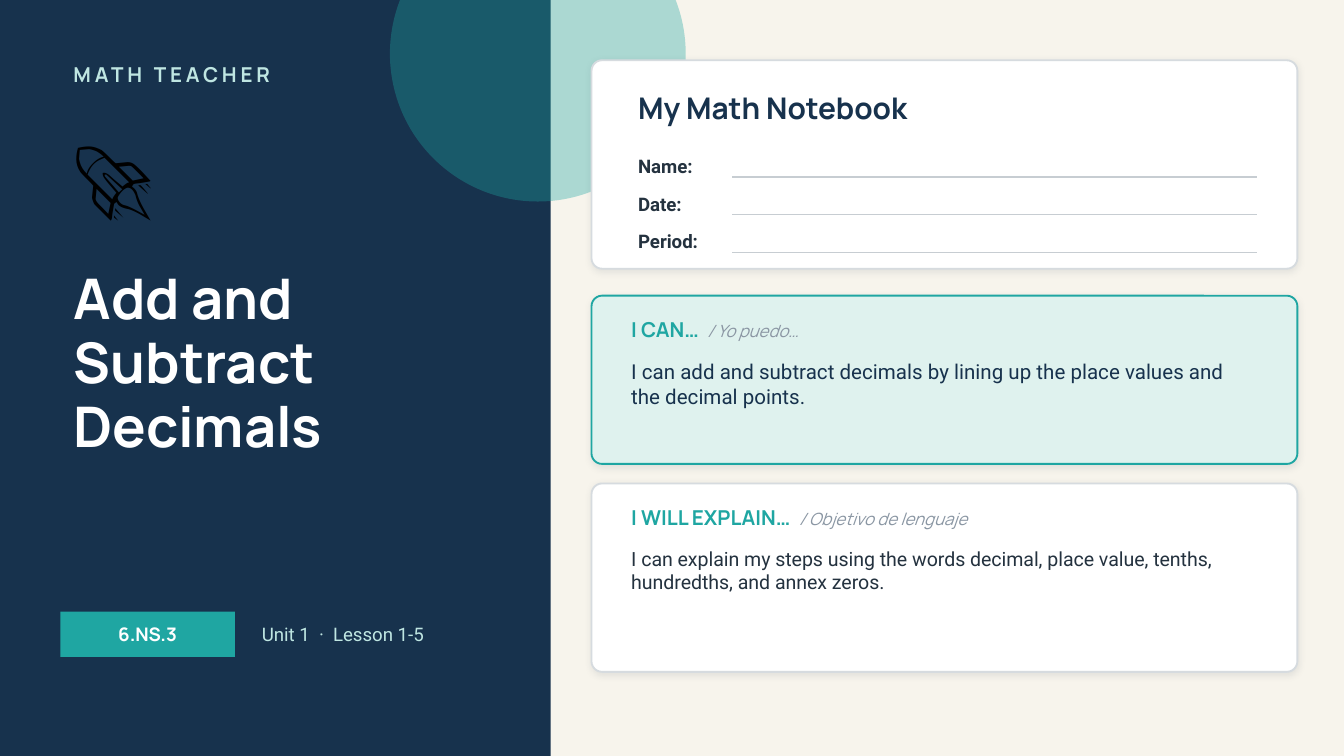
from lxml.etree import SubElement
from pptx import Presentation
from pptx.dml.color import RGBColor
from pptx.enum.shapes import MSO_CONNECTOR as Link, MSO_SHAPE as Form
from pptx.enum.text import MSO_ANCHOR as Anchor, MSO_AUTO_SIZE as Fit, PP_ALIGN as Align
from pptx.oxml.ns import qn
from pptx.util import Cm, Pt

NAVY = RGBColor(0x17, 0x32, 0x4D)
TEAL = RGBColor(0x1F, 0xA6, 0xA2)
MINT = RGBColor(0xBF, 0xE6, 0xE2)
PALE = RGBColor(0xDF, 0xF2, 0xEE)
CREAM = RGBColor(0xF7, 0xF4, 0xEC)
WHITE = RGBColor(0xFF, 0xFF, 0xFF)
BLACK = RGBColor(0, 0, 0)
INK = RGBColor(0x24, 0x32, 0x3F)
GRAY = RGBColor(0x8A, 0x96, 0xA3)
EDGE = RGBColor(0xD6, 0xDB, 0xDF)
RULE = RGBColor(0xC7, 0xCD, 0xD2)
SHADE = "1C2E42"


class Deck:
    head = "Manrope"
    body = "Roboto"
    curve = 0.2

    def __init__(self, show):
        self.slide = show.slides.add_slide(show.slide_layouts[5])
        self.slide.background.fill.solid()
        self.slide.background.fill.fore_color.rgb = CREAM
        self.shapes = self.slide.shapes

    def add_run(self, par, text, size, color, font=None, bold=False, slant=False, space=0):
        run = par.add_run()
        run.text = text
        face = run.font
        face.name = font or self.body
        face.size = Pt(size)
        face.bold = bold
        face.italic = slant
        face.color.rgb = color
        if space:
            run._r.get_or_add_rPr().set("spc", str(space * 100))

    def fill_in(self, shape, runs, anchor=Anchor.MIDDLE, align=Align.LEFT):
        frame = shape.text_frame
        frame.word_wrap = True
        frame.auto_size = Fit.NONE
        frame.vertical_anchor = anchor
        par = frame.paragraphs[0]
        par.alignment = align
        for text, size, color, *style in runs:
            self.add_run(par, text, size, color, *style)
        return par

    def text(self, x, y, w, h, *runs, anchor=Anchor.MIDDLE):
        box = self.shapes.add_textbox(Cm(x), Cm(y), Cm(w), Cm(h))
        self.fill_in(box, runs, anchor)

    def title(self, x, y, w, h, text, size, color):
        box = self.shapes.title
        box.left, box.top, box.width, box.height = Cm(x), Cm(y), Cm(w), Cm(h)
        par = self.fill_in(box, [(text, size, color, self.head, True)], Anchor.TOP)
        par.line_spacing = 0.95
        box.element.getparent().append(box.element)

    def shape(self, form, x, y, w, h, fill, edge=None, alpha=None):
        shape = self.shapes.add_shape(form, Cm(x), Cm(y), Cm(w), Cm(h))
        shape.shadow.inherit = False
        shape.fill.solid()
        shape.fill.fore_color.rgb = fill
        if edge is None:
            shape.line.fill.background()
        else:
            shape.line.color.rgb = edge
            shape.line.width = Pt(1)
        if alpha:
            tint = shape.element.spPr.find(qn("a:solidFill"))[0]
            SubElement(tint, qn("a:alpha"), val=str(alpha * 1000))
        return shape

    def card(self, y, h, fill, edge):
        card = self.shape(Form.ROUNDED_RECTANGLE, 11.18, y, 13.34, h, fill, edge)
        card.adjustments[0] = self.curve / h
        effects = card.element.spPr.find(qn("a:effectLst"))
        shade = SubElement(effects, qn("a:outerShdw"), blurRad=str(Pt(4)),
                           dist=str(Pt(1)), dir="5400000", rotWithShape="0")
        tint = SubElement(shade, qn("a:srgbClr"), val=SHADE)
        SubElement(tint, qn("a:alpha"), val="10000")

    def goal(self, y, h, fill, edge, lead, gloss, text, size, color):
        self.card(y, h, fill, edge)
        self.text(11.68, y + 0.25, 12.32, 0.76,
                  (lead, 11, TEAL, self.head, True),
                  (gloss, 9, GRAY, self.head, False, True))
        self.text(11.68, y + 1.07, 12.32, h - 1.2, (text, size, color), anchor=Anchor.TOP)

    def field(self, y, label):
        self.text(11.81, y, 2.03, 0.61, (label, 10, INK, self.body, True))
        rule = y + 0.51
        line = self.shapes.add_connector(Link.STRAIGHT, Cm(13.84), Cm(rule), Cm(23.75), Cm(rule))
        line.line.color.rgb = RULE
        line.line.width = Pt(0.75)
        SubElement(line.element.spPr, qn("a:effectLst"))


def main():
    show = Presentation()
    show.slide_width, show.slide_height = Cm(25.4), Cm(14.29)
    deck = Deck(show)
    left = 1.14

    deck.shape(Form.RECTANGLE, 0, 0, 10.41, 14.29, NAVY)
    deck.shape(Form.OVAL, 7.37, -1.78, 5.59, 5.59, TEAL, alpha=35)
    deck.text(left, 1.02, 8.38, 0.76, ("MATH TEACHER", 11, MINT, deck.head, True, False, 2))
    deck.text(left, 2.16, 3.81, 2.29, ("🚀", 44, BLACK, "Calibri"))
    deck.title(left, 4.95, 8.38, 4.32, "Add and Subtract Decimals", 30, WHITE)
    badge = deck.shape(Form.RECTANGLE, left, 11.56, 3.3, 0.86, TEAL)
    deck.fill_in(badge, [("6.NS.3", 10, WHITE, deck.head, True)], align=Align.CENTER)
    deck.text(4.7, 11.56, 5.33, 0.86, ("Unit 1  ·  Lesson 1-5", 10, MINT))

    deck.card(1.14, 3.94, WHITE, EDGE)
    deck.text(11.81, 1.52, 12.19, 1.02, ("My Math Notebook", 16, NAVY, deck.head, True))
    for i, label in enumerate(["Name:", "Date:", "Period:"]):
        deck.field(2.84 + i * 0.71, label)

    deck.goal(5.59, 3.18, PALE, TEAL, "I CAN…  ", "/ Yo puedo…",
              "I can add and subtract decimals by lining up the place values "
              "and the decimal points.", 11, NAVY)
    deck.goal(9.14, 3.56, WHITE, EDGE, "I WILL EXPLAIN…  ", "/ Objetivo de lenguaje",
              "I can explain my steps using the words decimal, place value, tenths, "
              "hundredths, and annex zeros.", 10.5, INK)
    show.save("out.pptx")


if __name__ == "__main__":
    main()
